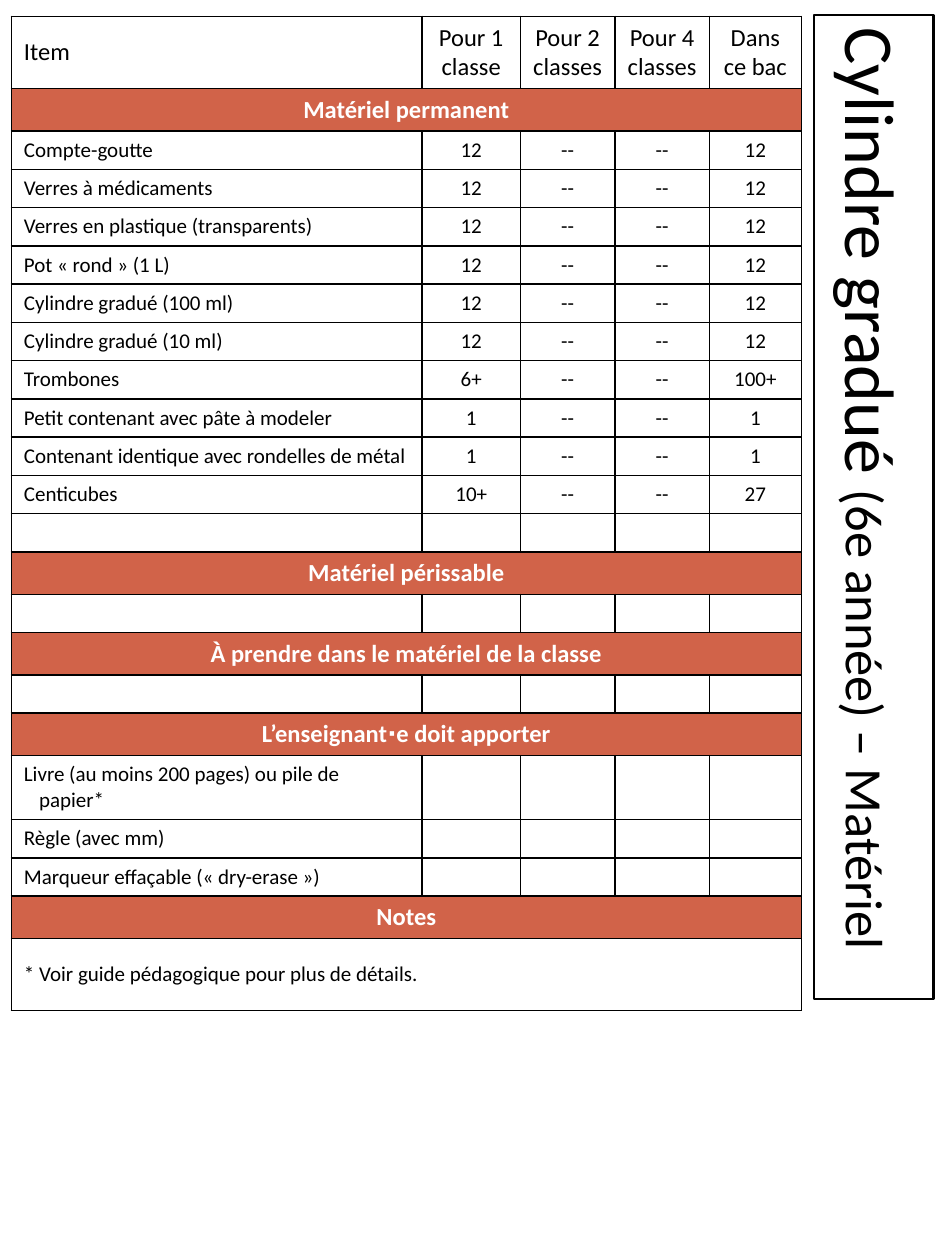
from lxml import etree
from pptx import Presentation
from pptx.dml.color import RGBColor
from pptx.enum.text import MSO_ANCHOR, MSO_AUTO_SIZE, PP_ALIGN
from pptx.oxml.ns import qn
from pptx.util import Inches, Pt

LEFT, CENTER = PP_ALIGN.LEFT, PP_ALIGN.CENTER
MIDDLE = MSO_ANCHOR.MIDDLE
FIXED = MSO_AUTO_SIZE.NONE

BLACK = RGBColor(0, 0, 0)
WHITE = RGBColor(255, 255, 255)
RUST = RGBColor(0xD1, 0x63, 0x49)

COLS, ROWS = 750, 1000
WIDTHS = [326, 78, 75, 75, 73]
HEAD_ROW, BAND_ROW, ITEM_ROW, LONG_ROW = 57, 33, 30, 50

HEADS = ["Item", "Pour 1 classe", "Pour 2 classes", "Pour 4 classes", "Dans ce bac"]
BLANK = ("", "", "")
GROUPS = [
    ("Matériel permanent", [
        ("Compte-goutte", "12", "12"),
        ("Verres à médicaments", "12", "12"),
        ("Verres en plastique (transparents)", "12", "12"),
        ("Pot « rond » (1 L)", "12", "12"),
        ("Cylindre gradué (100 ml)", "12", "12"),
        ("Cylindre gradué (10 ml)", "12", "12"),
        ("Trombones", "6+", "100+"),
        ("Petit contenant avec pâte à modeler", "1", "1"),
        ("Contenant identique avec rondelles de métal", "1", "1"),
        ("Centicubes", "10+", "27"),
        BLANK,
    ]),
    ("Matériel périssable", [BLANK]),
    ("À prendre dans le matériel de la classe", [BLANK]),
    ("L’enseignant∙e doit apporter", [
        ("Livre (au moins 200 pages) ou pile de papier*", "", ""),
        ("Règle (avec mm)", "", ""),
        ("Marqueur effaçable (« dry-erase »)", "", ""),
    ]),
]
NOTE = "* Voir guide pédagogique pour plus de détails."


class Page:
    font = "Calibri"

    def __init__(self, deck):
        self.wide, self.high = deck.slide_width, deck.slide_height
        self.slide = deck.slides.add_slide(deck.slide_layouts[5])

    def across(self, cols):
        return round(self.wide * cols / COLS)

    def down(self, rows):
        return round(self.high * rows / ROWS)

    def style(self, run, size, color=BLACK, bold=False):
        run.font.name = self.font
        run.font.size = Pt(size)
        run.font.bold = bold
        run.font.color.rgb = color

    def title(self, left, top, width, height, parts):
        box = self.slide.shapes.title
        box.left, box.top = self.across(left), self.down(top)
        box.width, box.height = self.across(width), self.down(height)
        box.rotation = 90
        box.line.color.rgb = BLACK
        box.line.width = Pt(1.5)
        frame = box.text_frame
        frame.auto_size = FIXED
        frame.word_wrap = True
        frame.vertical_anchor = MIDDLE
        para = frame.paragraphs[0]
        para.alignment = LEFT
        for text, size in parts:
            run = para.add_run()
            run.text = text
            self.style(run, size)

    def table(self, left, top, widths, heights):
        frame = self.slide.shapes.add_table(
            len(heights), len(widths), self.across(left), self.down(top),
            self.across(sum(widths)), self.down(sum(heights)))
        grid = frame.table
        grid.first_row = grid.horz_banding = False
        for col, width in zip(grid.columns, widths):
            col.width = self.across(width)
        for row, height in zip(grid.rows, heights):
            row.height = self.down(height)
        for cell in grid.iter_cells():
            self.border(cell)
            cell.fill.background()
        return grid

    def border(self, cell):
        props = cell._tc.get_or_add_tcPr()
        for side in ("lnL", "lnR", "lnT", "lnB"):
            line = etree.SubElement(props, qn("a:" + side), w=str(Pt(1)))
            fill = etree.SubElement(line, qn("a:solidFill"))
            etree.SubElement(fill, qn("a:srgbClr"), val=str(BLACK))

    def cell(self, cell, text, size, align=LEFT, color=BLACK, bold=False, hang=0):
        cell.vertical_anchor = MIDDLE
        para = cell.text_frame.paragraphs[0]
        para.text = text
        para.alignment = align
        if hang:
            props = para._p.get_or_add_pPr()
            props.set("marL", str(Inches(hang)))
            props.set("indent", str(-Inches(hang)))
        for run in para.runs:
            self.style(run, size, color, bold)
        if not text:
            etree.SubElement(para._p, qn("a:endParaRPr"), sz=str(size * 100))

    def span(self, grid, row):
        first = grid.cell(row, 0)
        first.merge(grid.cell(row, len(grid.columns) - 1))
        return first

    def band(self, grid, row, text):
        cell = self.span(grid, row)
        cell.fill.solid()
        cell.fill.fore_color.rgb = RUST
        self.cell(cell, text, 14, CENTER, WHITE, True)

    def item(self, grid, row, name, one, stock):
        dash = "--" if one else ""
        self.cell(grid.cell(row, 0), name, 12, hang=0.12)
        for col, text in enumerate([one, dash, dash, stock], 1):
            self.cell(grid.cell(row, col), text, 12, CENTER)


def main():
    deck = Presentation()
    deck.slide_width, deck.slide_height = Inches(7.5), Inches(10)
    page = Page(deck)
    page.title(303, 355, 781, 95,
               [("Cylindre gradué ", 40), ("(6e année) – Matériel", 30)])

    heights = [HEAD_ROW]
    for _, items in GROUPS:
        heights.append(BAND_ROW)
        heights += [LONG_ROW if "Livre" in item[0] else ITEM_ROW for item in items]
    heights += [BAND_ROW, HEAD_ROW]
    grid = page.table(9, 13, WIDTHS, heights)

    for col, text in enumerate(HEADS):
        page.cell(grid.cell(0, col), text, 14, CENTER if col else LEFT)
    row = 1
    for name, items in GROUPS:
        page.band(grid, row, name)
        for row, item in enumerate(items, row + 1):
            page.item(grid, row, *item)
        row += 1
    page.band(grid, row, "Notes")
    page.cell(page.span(grid, row + 1), NOTE, 12, hang=0.2)
    deck.save("out.pptx")


if __name__ == "__main__":
    main()
